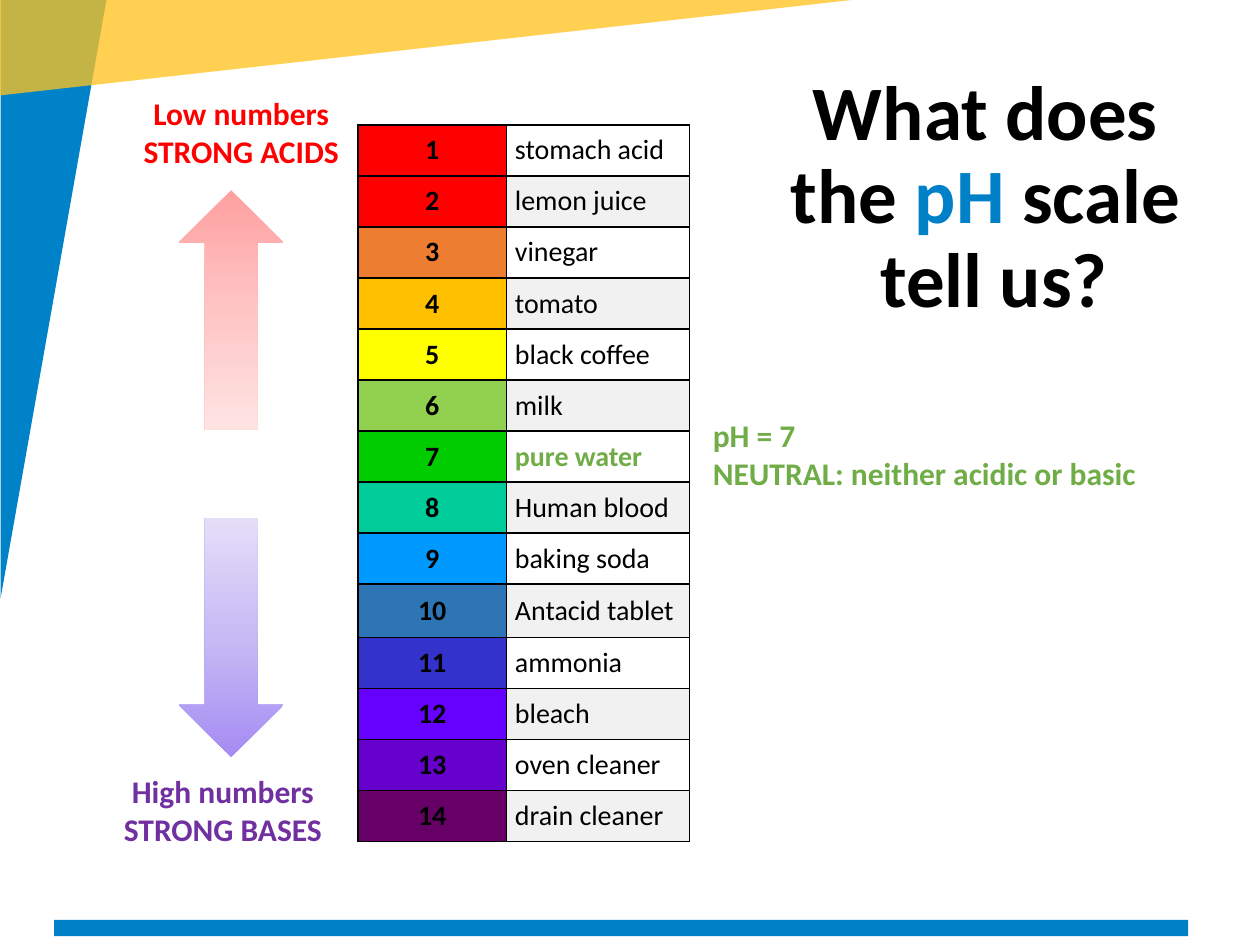
from dataclasses import dataclass

from lxml import etree
from pptx import Presentation
from pptx.dml.color import RGBColor
from pptx.enum.shapes import MSO_SHAPE
from pptx.enum.text import MSO_ANCHOR, PP_ALIGN
from pptx.oxml import parse_xml
from pptx.oxml.ns import nsdecls, qn
from pptx.util import Pt

TRIANGLE, BAR, ARROW = MSO_SHAPE.RIGHT_TRIANGLE, MSO_SHAPE.RECTANGLE, MSO_SHAPE.UP_ARROW
LEFT, CENTER = PP_ALIGN.LEFT, PP_ALIGN.CENTER
MIDDLE = MSO_ANCHOR.MIDDLE

FONT = "Calibri"
BLACK, WHITE, GRAY = "000000", "FFFFFF", "F1F1F1"
RED, PURPLE, GREEN = "FF0000", "7030A0", "70AD47"
BLUE, TITLE_BLUE, GOLD = "0082C8", "0081C7", "FFC31E"
ROW_HEIGHT, TALL_ROW_HEIGHT, TALL_ROW = 29.15, 30.5, 10
LINE_BREAK = "\n"


@dataclass
class Box:
    left: float
    top: float
    width: float
    height: float

    def lengths(self) -> list:
        return [Pt(v) for v in (self.left, self.top, self.width, self.height)]


@dataclass
class Run:
    text: str
    color: str = BLACK
    bold: bool = True


@dataclass
class Caption:
    box: Box
    paragraphs: list[list[Run]]
    size: float = 18
    align: PP_ALIGN = CENTER
    spacing: float = 1.0


@dataclass
class Level:
    color: str
    example: str


@dataclass
class Arrow:
    box: Box
    stops: dict[int, str]
    flipped: bool = False


LEVELS = [
    Level("FF0000", "stomach acid"),
    Level("FF0000", "lemon juice"),
    Level("ED7D31", "vinegar"),
    Level("FFC000", "tomato"),
    Level("FFFF00", "black coffee"),
    Level("92D050", "milk"),
    Level("00CC00", "pure water"),
    Level("00CC99", "Human blood"),
    Level("0099FF", "baking soda"),
    Level("2E75B6", "Antacid tablet"),
    Level("3333CC", "ammonia"),
    Level("6600FF", "bleach"),
    Level("6600CC", "oven cleaner"),
    Level("660066", "drain cleaner"),
]
NEUTRAL_LEVEL = 7

CAPTIONS = [
    Caption(Box(69.1, 50.4, 137.5, 51),
            [[Run("Low numbers", RED)], [Run("STRONG ACIDS", RED)]]),
    Caption(Box(58.3, 437.8, 138.2, 51),
            [[Run("High numbers", PURPLE)], [Run("STRONG BASES", PURPLE)]]),
    Caption(Box(355, 38.9, 426.2, 54.7),
            [[Run("What does \nthe "), Run("pH", TITLE_BLUE), Run(" scale \ntell us?")]],
            size=44, spacing=0.9),
    Caption(Box(400.3, 234, 312.5, 51),
            [[Run("pH = 7\nNEUTRAL: neither acidic or basic", GREEN)]], align=LEFT),
]

ARROWS = [
    Arrow(Box(102.2, 108.7, 59.8, 136.8), {0: "FFA0A0", 50: "FFC5C5", 100: "FFE3E3"}),
    Arrow(Box(102.2, 295.9, 59.8, 136.8), {0: "A58CF2", 50: "C7BAF5", 100: "E4DEF9"},
          flipped=True),
]


def paint(fill, color: str) -> None:
    fill.solid()
    fill.fore_color.rgb = RGBColor.from_string(color)


def add_plain_shape(slide, kind, box: Box, color: str):
    shape = slide.shapes.add_shape(kind, *box.lengths())
    shape.shadow.inherit = False
    shape.line.fill.background()
    paint(shape.fill, color)
    return shape


def write_runs(paragraph, runs: list[Run], size: float, align) -> None:
    paragraph.alignment = align
    for part in runs:
        for index, line in enumerate(part.text.split(LINE_BREAK)):
            if index:
                paragraph.add_line_break()
            run = paragraph.add_run()
            run.text = line
            formats = {"name": FONT, "size": Pt(size), "bold": part.bold}
            for name, value in formats.items():
                setattr(run.font, name, value)
            run.font.color.rgb = RGBColor.from_string(part.color)


def add_caption(slide, caption: Caption) -> None:
    frame = slide.shapes.add_textbox(*caption.box.lengths()).text_frame
    frame.word_wrap = True
    for index, runs in enumerate(caption.paragraphs):
        paragraph = frame.add_paragraph() if index else frame.paragraphs[0]
        paragraph.line_spacing = caption.spacing
        write_runs(paragraph, runs, caption.size, caption.align)


def add_arrow(slide, arrow: Arrow) -> None:
    shape = add_plain_shape(slide, ARROW, arrow.box, arrow.stops[0])
    properties = shape._element.spPr
    if arrow.flipped:
        properties.find(qn("a:xfrm")).set("flipV", "1")
    stops = "".join(f'<a:gs pos="{position * 1000}"><a:srgbClr val="{color}"/></a:gs>'
                    for position, color in arrow.stops.items())
    gradient = parse_xml(f'<a:gradFill {nsdecls("a")} rotWithShape="1"><a:gsLst>{stops}'
                         '</a:gsLst><a:lin ang="5400000" scaled="0"/></a:gradFill>')
    properties.replace(properties.find(qn("a:solidFill")), gradient)


def fill_cell(cell, run: Run, color: str, align) -> None:
    margins = dict.fromkeys(("margin_left", "margin_right", "margin_top", "margin_bottom"),
                            Pt(4.8))
    for name, value in (margins | {"vertical_anchor": MIDDLE}).items():
        setattr(cell, name, value)
    write_runs(cell.text_frame.paragraphs[0], [run], 16, align)
    properties = cell._tc.get_or_add_tcPr()
    for side in ("lnL", "lnR", "lnT", "lnB"):
        border = etree.SubElement(properties, qn(f"a:{side}"), w=str(Pt(1)))
        border_fill = etree.SubElement(border, qn("a:solidFill"))
        etree.SubElement(border_fill, qn("a:srgbClr"), val=BLACK)
    paint(cell.fill, color)


def add_scale(slide, box: Box) -> None:
    table = slide.shapes.add_table(len(LEVELS), 2, *box.lengths()).table
    for column, width in zip(table.columns, (85, 104.6)):
        column.width = Pt(width)
    for number, level in enumerate(LEVELS, start=1):
        row = table.rows[number - 1]
        row.height = Pt(TALL_ROW_HEIGHT if number == TALL_ROW else ROW_HEIGHT)
        neutral = number == NEUTRAL_LEVEL
        example = Run(level.example, GREEN if neutral else BLACK, neutral)
        fill_cell(row.cells[0], Run(str(number)), level.color, CENTER)
        fill_cell(row.cells[1], example, WHITE if number % 2 else GRAY, LEFT)


def main() -> None:
    deck = Presentation()
    deck.slide_width, deck.slide_height = Pt(720), Pt(540)
    slide = deck.slides.add_slide(deck.slide_layouts[6])

    # Corner triangles and bottom bar
    side = add_plain_shape(slide, TRIANGLE, Box(-140.4, 140.4, 342, 60.5), BLUE)
    side.rotation = 90
    top = add_plain_shape(slide, TRIANGLE, Box(-15.1, -1.4, 514.1, 57.6), GOLD)
    top.rotation = 180
    top._element.spPr.find(qn("a:xfrm")).set("flipH", "1")
    gold = top._element.spPr.find(qn("a:solidFill"))[0]
    etree.SubElement(gold, qn("a:alpha"), val="77000")
    add_plain_shape(slide, BAR, Box(31, 525.6, 648, 9.4), TITLE_BLUE)

    # pH scale with everyday examples
    add_scale(slide, Box(204.5, 71.3, 189.6, 409.45))

    # Title, labels and direction arrows
    for caption in CAPTIONS:
        add_caption(slide, caption)
    for arrow in ARROWS:
        add_arrow(slide, arrow)

    deck.save("out.pptx")


if __name__ == "__main__":
    main()
